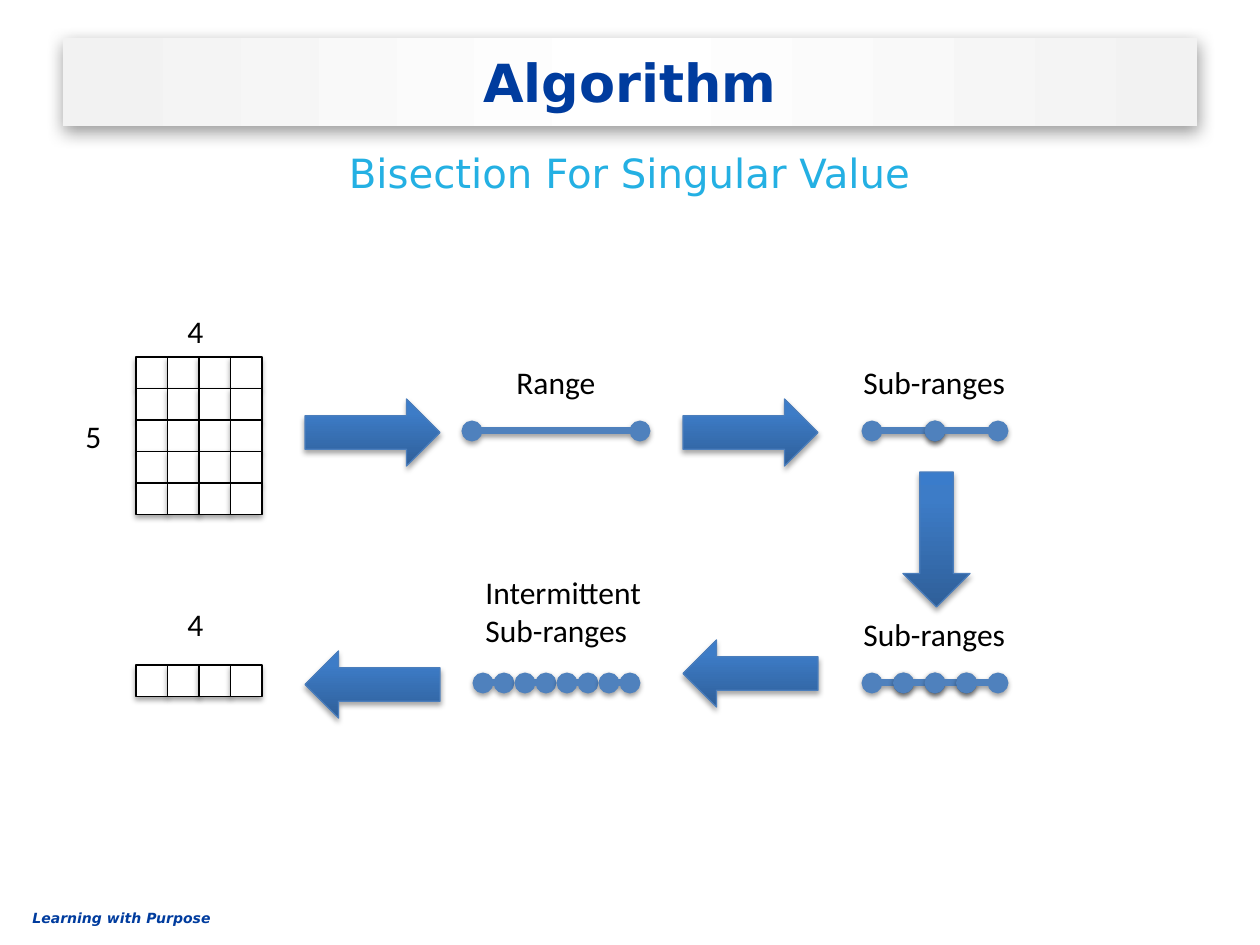
from lxml import etree
from pptx import Presentation
from pptx import util as u
from pptx.dml.color import RGBColor
from pptx.enum import shapes, text
from pptx.oxml.ns import qn

PX = 7257
COLORS = {
    "navy": "003C9E", "sky": "24B0E3", "black": "000000", "white": "FFFFFF",
    "silver": "F2F2F2", "range": "4F81BD", "arrow_edge": "4B7EBC",
    "arrow_dark": "2F5F99", "arrow_mid": "3D7CC7", "arrow_light": "3A7CCB",
}
RGB = {name: RGBColor.from_string(value) for name, value in COLORS.items()}


def add_shadow(effects, opacity, blur, distance):
    outer = etree.SubElement(
        effects, qn("a:outerShdw"), blurRad=str(u.Pt(blur)),
        dist=str(u.Pt(distance)), dir="5400000", rotWithShape="0")
    color = etree.SubElement(outer, qn("a:srgbClr"), val=COLORS["black"])
    etree.SubElement(color, qn("a:alpha"), val=str(opacity * 1000))


def fill_gradient(shape, angle, stops):
    shape.fill.gradient()
    shape.fill.gradient_angle = angle
    stop_list = shape._element.spPr.find(".//" + qn("a:gsLst"))
    stop_list.clear()
    for position, color in stops:
        stop = etree.SubElement(stop_list, qn("a:gs"), pos=str(position * 1000))
        etree.SubElement(stop, qn("a:srgbClr"), val=COLORS[color])


prs = Presentation()
prs.slide_width, prs.slide_height = u.Inches(10), u.Inches(7.5)
slide = prs.slides.add_slide(prs.slide_layouts[5])

title = slide.shapes.title
title.left, title.top, title.width, title.height = 63 * PX, 38 * PX, 1134 * PX, 88 * PX
fill_gradient(title, 0, [(2, "silver"), (50, "white"), (100, "silver")])
title.shadow.inherit = False
add_shadow(title._element.spPr.find(qn("a:effectLst")), 40, 10, 3)
title.text_frame.text = "Algorithm"
title.text_frame.vertical_anchor = text.MSO_ANCHOR.MIDDLE
heading = title.text_frame.paragraphs[0]
heading.alignment = text.PP_ALIGN.CENTER
heading.font.name, heading.font.size, heading.font.bold = "DejaVu Sans", u.Pt(30), True
heading.font.color.rgb = RGB["navy"]

subtitle = slide.shapes.add_textbox(63 * PX, 136 * PX, 1134 * PX, 73 * PX).text_frame
subtitle.word_wrap = True
subtitle.vertical_anchor = text.MSO_ANCHOR.MIDDLE
subtitle.text = "Bisection For Singular Value"
method = subtitle.paragraphs[0]
method.alignment = text.PP_ALIGN.CENTER
method.font.name, method.font.size = "DejaVu Sans", u.Pt(23)
method.font.color.rgb = RGB["sky"]

footer = slide.shapes.add_textbox(20 * PX, 903 * PX, 465 * PX, 30 * PX).text_frame
footer.word_wrap = True
footer.text = "Learning with Purpose"
motto = footer.paragraphs[0]
motto.font.name, motto.font.size = "DejaVu Sans", u.Pt(8)
motto.font.bold = motto.font.italic = True
motto.font.color.rgb = RGB["navy"]

cell_size = 126 * PX // 4
singular_values = slide.shapes.add_group_shape()
for parent, top, rows in [(slide.shapes, 357, 5), (singular_values.shapes, 665, 1)]:
    for row in range(rows):
        for column in range(4):
            cell = parent.add_shape(
                shapes.MSO_SHAPE.RECTANGLE, 136 * PX + column * cell_size,
                top * PX + row * cell_size, cell_size, cell_size)
            cell.fill.solid()
            cell.fill.fore_color.rgb = RGB["white"]
            cell.line.color.rgb = RGB["black"]
            cell.line.width = u.Pt(0.75)
            cell.shadow.inherit = False
            add_shadow(cell._element.spPr.find(qn("a:effectLst")), 35, 3.1, 1.8)

for direction, left, top, width, height in [
    (shapes.MSO_SHAPE.RIGHT_ARROW, 305, 399, 135, 67),
    (shapes.MSO_SHAPE.RIGHT_ARROW, 683, 399, 135, 67),
    (shapes.MSO_SHAPE.DOWN_ARROW, 903, 472, 67, 135),
    (shapes.MSO_SHAPE.LEFT_ARROW, 683, 640, 135, 67),
    (shapes.MSO_SHAPE.LEFT_ARROW, 305, 651, 135, 67),
]:
    step = slide.shapes.add_shape(direction, left * PX, top * PX, width * PX, height * PX)
    fill_gradient(step, 90, [(0, "arrow_dark"), (80, "arrow_mid"), (100, "arrow_light")])
    step.line.color.rgb = RGB["arrow_edge"]
    step.line.width = u.Pt(0.75)
    step.shadow.inherit = False
    add_shadow(step._element.spPr.find(qn("a:effectLst")), 35, 3.1, 1.8)

for left, y, length, parts, stride in [
    (472, 431, 168, 1, 1),
    (872, 431, 126, 2, 1),
    (872, 683, 126, 4, 1),
    (483, 683, 147, 7, 2),
]:
    for part in range(0, parts, stride):
        start, end = [left * PX + length * PX * i // parts for i in (part, part + 1)]
        interval = slide.shapes.add_connector(
            shapes.MSO_CONNECTOR.STRAIGHT, start, y * PX, end, y * PX)
        interval.line.color.rgb = RGB["range"]
        interval.line.width = u.Pt(4)
        outline = interval.line._get_or_add_ln()
        for endpoint in ("a:headEnd", "a:tailEnd"):
            etree.SubElement(outline, qn(endpoint), type="oval")
        effects = etree.SubElement(interval._element.spPr, qn("a:effectLst"))
        add_shadow(effects, 38, 3.1, 1.6)

for wording, left, top, width, height in [
    ("5", 73, 411, 42, 50),
    ("4", 175, 306, 42, 50),
    ("4", 175, 599, 42, 50),
    ("Range", 504, 357, 106, 50),
    ("Sub-ranges", 851, 357, 170, 50),
    ("Sub-ranges", 851, 609, 170, 50),
    ("Intermittent\nSub-ranges", 473, 567, 184, 89),
]:
    label = slide.shapes.add_textbox(left * PX, top * PX, width * PX, height * PX).text_frame
    label.word_wrap = False
    label.auto_size = text.MSO_AUTO_SIZE.SHAPE_TO_FIT_TEXT
    label.text = wording
    for line in label.paragraphs:
        line.font.name, line.font.size = "Calibri", u.Pt(18)
        line.font.color.rgb = RGB["black"]

prs.save("out.pptx")
